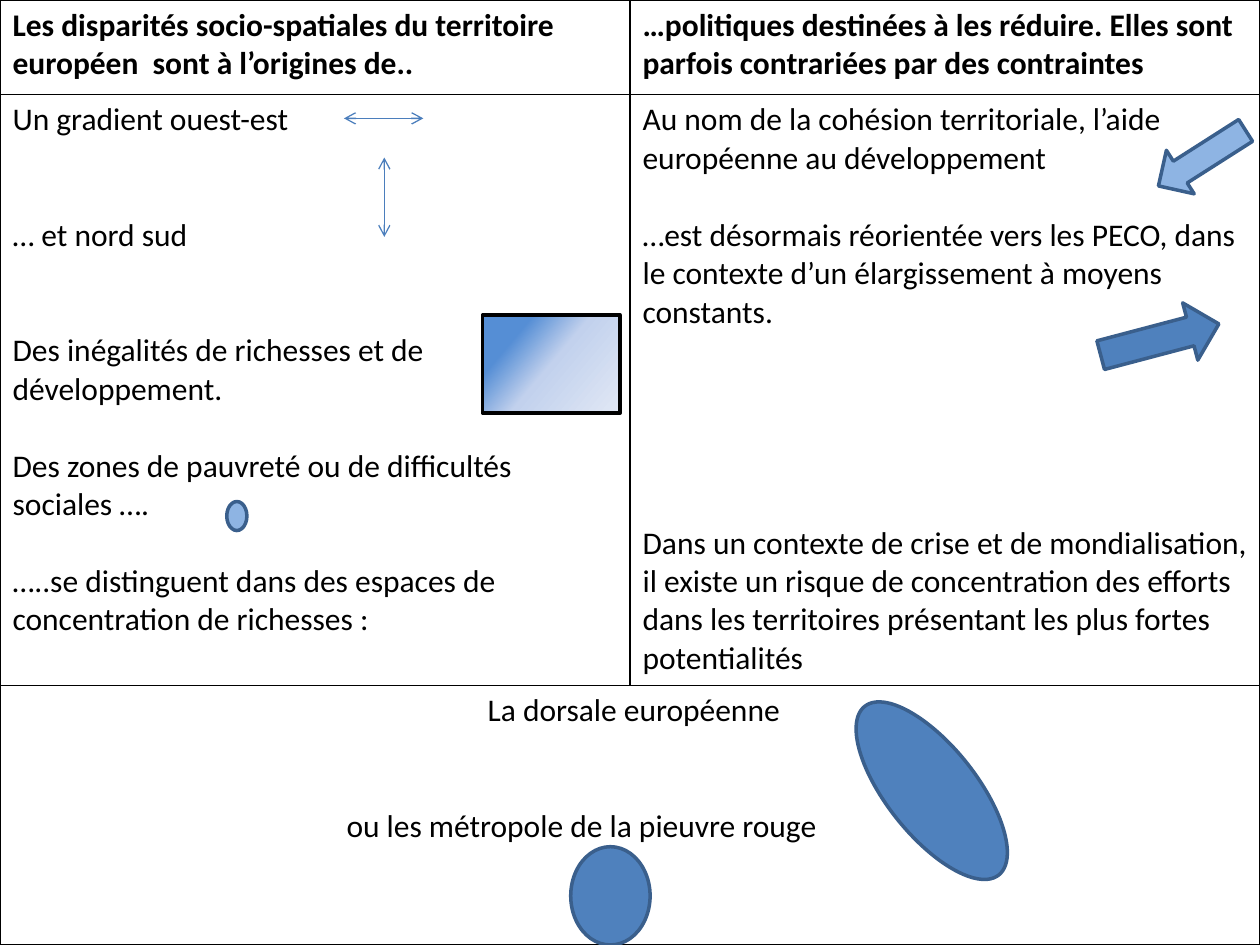
import copy
from dataclasses import dataclass

import pptx
import pptx.util
import pptx.dml.color
import pptx.enum.shapes
import pptx.oxml.ns
from lxml import etree

Shape = pptx.enum.shapes.MSO_SHAPE
qualified = pptx.oxml.ns.qn


@dataclass(frozen=True)
class Theme:
    font: str = "Calibri"
    size: float = 18
    line_height: float = 22
    text: str = "000000"
    border: str = "000000"
    border_width: float = 1
    light: str = "8EB4E3"
    dark: str = "4F81BD"
    outline: str = "3A5F8C"
    outline_width: float = 2
    arrow: str = "4B7EBC"
    arrow_width: float = 0.75
    gradient: tuple = ((23, "558ED5"), (50, "C2D1ED"), (100, "E1E8F5"))
    gradient_angle: float = 320


THEME = Theme()
WIDTH, HEIGHT = pptx.util.Inches(10), pptx.util.Inches(7.5)

ROW_SHARES = (10, 62.53, 27.47)
COLUMN_SHARES = (50, 50)

# Paragraphs: text, lines of space above, indent as a share of the width
CELLS = {
    (0, 0): [("Les disparités socio-spatiales du territoire européen  sont à l’origines de..", 0, 0)],
    (0, 1): [("…politiques destinées à les réduire. Elles sont parfois contrariées par des contraintes", 0, 0)],
    (1, 0): [
        ("Un gradient ouest-est", 0, 0),
        ("… et nord sud", 2, 0),
        ("Des inégalités de richesses et de développement.", 2, 0),
        ("Des zones de pauvreté ou de difficultés sociales ….", 1, 0),
        ("…..se distinguent dans des espaces de concentration de richesses :", 1, 0),
    ],
    (1, 1): [
        ("Au nom de la cohésion territoriale, l’aide européenne au développement", 0, 0),
        ("…est désormais réorientée vers les PECO, dans le contexte d’un élargissement à moyens constants.", 1, 0),
        ("Dans un contexte de crise et de mondialisation, il existe un risque de concentration "
         "des efforts dans les territoires présentant les plus fortes potentialités", 5, 0),
    ],
    (2, 0): [
        ("La dorsale européenne", 0, 37.7),
        ("ou les métropole de la pieuvre rouge", 2, 26.5),
    ],
}

GRADIENT_ARROWS = [(27.3, 12.53, 33.6, 12.53), (30.5, 16.67, 30.5, 25.07)]

INEQUALITY_BOX = (38.3, 33.33, 10.9, 10.4)

SYMBOLS = [
    (Shape.OVAL, (18, 53.07, 1.6, 3.07), 0, THEME.light),
    (Shape.OVAL, (45.3, 89.6, 6.3, 10.4), 0, THEME.dark),
    (Shape.OVAL, (70.4, 72.27, 7.1, 22.8), 321.5, THEME.dark),
    (Shape.RIGHT_ARROW, (91.3, 14, 8.2, 5.47), 147.5, THEME.light),
    (Shape.RIGHT_ARROW, (87.2, 32.8, 9.7, 6.27), 345.2, THEME.dark),
]


def color(value):
    return pptx.dml.color.RGBColor.from_string(value)


def place(shares):
    return [int(share * side / 100) for share, side in zip(shares, (WIDTH, HEIGHT) * 2)]


def set_line(line, line_color, width):
    line.color.rgb = color(line_color)
    line.width = pptx.util.Pt(width)


def add_borders(cell):
    properties = cell._tc.get_or_add_tcPr()
    for index, side in enumerate(("lnL", "lnR", "lnT", "lnB")):
        border = etree.Element(qualified("a:" + side), w=str(pptx.util.Pt(THEME.border_width)))
        fill = etree.SubElement(border, qualified("a:solidFill"))
        etree.SubElement(fill, qualified("a:srgbClr"), val=THEME.border)
        properties.insert(index, border)


def write_cell(cell, paragraphs, bold):
    for index, (text, lines_above, indent) in enumerate(paragraphs):
        frame = cell.text_frame
        paragraph = frame.add_paragraph() if index else frame.paragraphs[0]
        paragraph.text = text
        paragraph.space_before = pptx.util.Pt(lines_above * THEME.line_height)
        paragraph.font.name = THEME.font
        paragraph.font.size = pptx.util.Pt(THEME.size)
        paragraph.font.bold = bold
        paragraph.font.color.rgb = color(THEME.text)
        if indent:
            paragraph._p.get_or_add_pPr().set("marL", str(int(indent * WIDTH / 100)))


def add_text_table(slide):
    table = slide.shapes.add_table(len(ROW_SHARES), len(COLUMN_SHARES), 0, 0, WIDTH, HEIGHT).table
    table.first_row = table.horz_banding = False
    for row, share in zip(table.rows, ROW_SHARES):
        row.height = int(share * HEIGHT / 100)
    for column, share in zip(table.columns, COLUMN_SHARES):
        column.width = int(share * WIDTH / 100)
    table.cell(2, 0).merge(table.cell(2, 1))
    for cell in table.iter_cells():
        cell.fill.background()
        add_borders(cell)
    for (row, column), paragraphs in CELLS.items():
        write_cell(table.cell(row, column), paragraphs, row == 0)


def add_double_arrow(slide, shares):
    connector = slide.shapes.add_connector(pptx.enum.shapes.MSO_CONNECTOR.STRAIGHT, *place(shares))
    set_line(connector.line, THEME.arrow, THEME.arrow_width)
    line = connector.line._get_or_add_ln()
    for end in ("headEnd", "tailEnd"):
        etree.SubElement(line, qualified("a:" + end), type="arrow")
    etree.SubElement(connector._element.spPr, qualified("a:effectLst"))


def add_symbol(slide, kind, shares, rotation=0):
    shape = slide.shapes.add_shape(kind, *place(shares))
    shape.rotation = rotation
    shape.shadow.inherit = False
    set_line(shape.line, THEME.outline, THEME.outline_width)
    return shape


def fill_gradient(shape):
    shape.fill.gradient()
    shape.fill.gradient_angle = THEME.gradient_angle
    stops = shape._element.spPr.find(".//" + qualified("a:gsLst"))
    stops.append(copy.deepcopy(stops[-1]))
    for stop, (position, value) in zip(shape.fill.gradient_stops, THEME.gradient):
        stop.position = position / 100
        stop.color.rgb = color(value)


def main():
    presentation = pptx.Presentation()
    presentation.slide_width, presentation.slide_height = WIDTH, HEIGHT
    slide = presentation.slides.add_slide(presentation.slide_layouts[6])
    add_text_table(slide)
    for shares in GRADIENT_ARROWS:
        add_double_arrow(slide, shares)
    box = add_symbol(slide, Shape.RECTANGLE, INEQUALITY_BOX)
    fill_gradient(box)
    set_line(box.line, THEME.border, THEME.outline_width)
    for kind, shares, rotation, fill in SYMBOLS:
        symbol = add_symbol(slide, kind, shares, rotation)
        symbol.fill.solid()
        symbol.fill.fore_color.rgb = color(fill)
    presentation.save("out.pptx")


if __name__ == "__main__":
    main()
